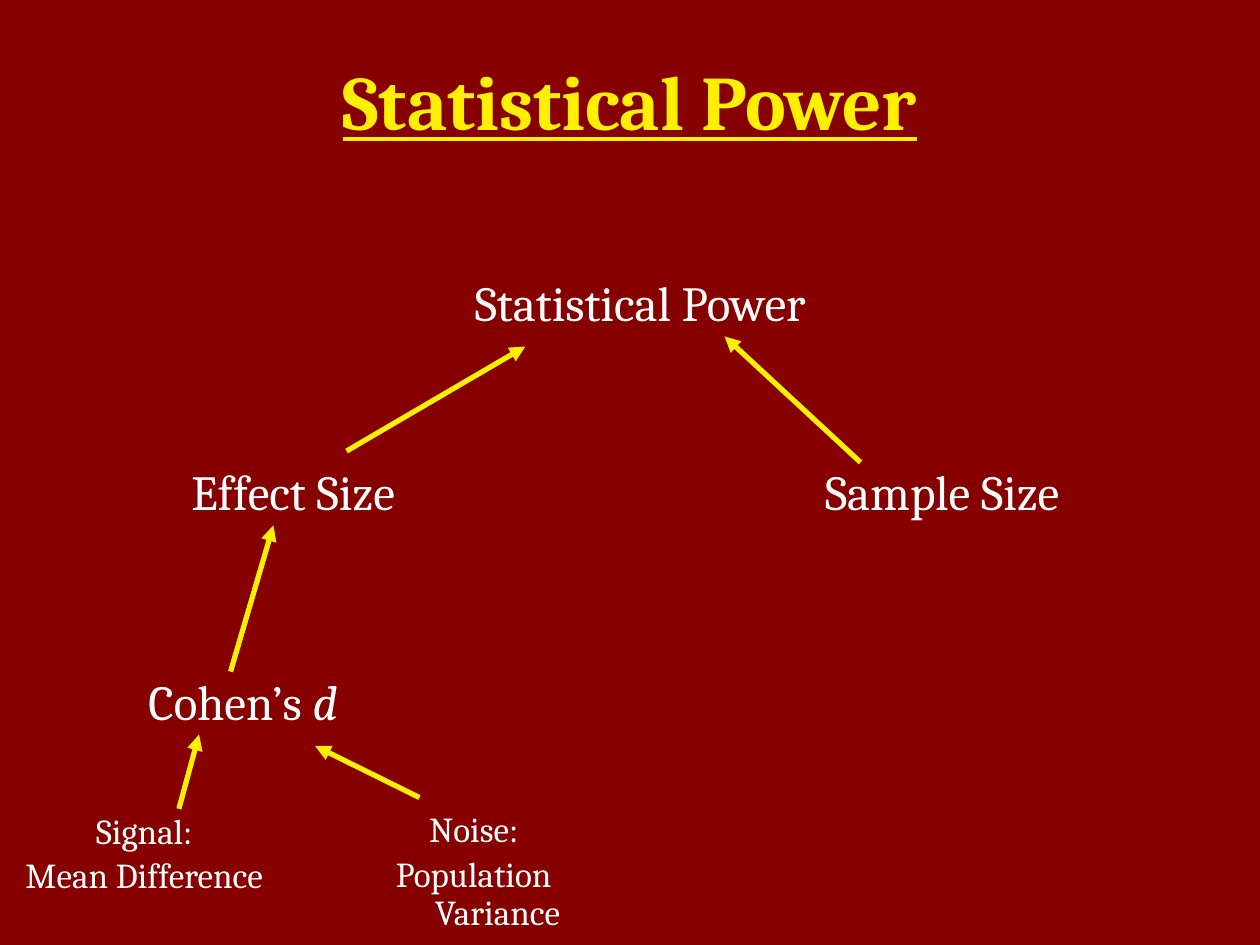
from pptx import Presentation
from pptx.dml.color import RGBColor
from pptx.enum.shapes import MSO_CONNECTOR
from pptx.enum.text import MSO_ANCHOR, MSO_AUTO_SIZE, PP_ALIGN
from pptx.oxml.ns import qn
from pptx.util import Inches, Pt
from lxml import etree

STRAIGHT = MSO_CONNECTOR.STRAIGHT
MIDDLE = MSO_ANCHOR.MIDDLE
GROW = MSO_AUTO_SIZE.SHAPE_TO_FIT_TEXT
LEFT, CENTER = PP_ALIGN.LEFT, PP_ALIGN.CENTER

THEME = {
    "font": "Cambria",
    "background": RGBColor(0x86, 0x00, 0x00),
    "accent": RGBColor(0xFF, 0xEF, 0x02),
    "text": RGBColor(0xFF, 0xFF, 0xFF),
    "title": 44,
    "concept": 28,
    "component": 20,
    "arrow": 3,
}

TITLE = "Statistical Power"

# Each line is a list of (text, italic) runs; box is left, top, width, height.
CONCEPTS = [
    ([[("Statistical Power", False)]], (3.67, 2.17, 2.92, 0.52)),
    ([[("Effect Size", False)]], (1.42, 3.67, 2.02, 0.52)),
    ([[("Sample Size", False)]], (6.45, 3.67, 2.23, 0.52)),
    ([[("Cohen’s ", False), ("d", True)]], (1.08, 5.33, 1.89, 0.52)),
]
COMPONENTS = [
    ([[("Signal:", False)], [("Mean Difference", False)]],
     (0.05, 6.41, 2.19, 0.77)),
    ([[("Noise:", False)], [("Population Variance", False)]],
     (2.56, 6.4, 2.4, 0.77)),
]

# Start and head of each arrow
ARROWS = [
    ((2.75, 3.58), (4.17, 2.75)),
    ((6.83, 3.67), (5.75, 2.67)),
    ((1.83, 5.33), (2.17, 4.17)),
    ((1.42, 6.42), (1.58, 5.83)),
    ((3.33, 6.33), (2.5, 5.92)),
]


def set_font(font, size, color):
    font.name = THEME["font"]
    font.size = Pt(size)
    font.color.rgb = color


def add_title(slide):
    sp = slide.shapes.title
    sp.left, sp.top, sp.width, sp.height = map(Inches, (0.75, 0.17, 8.5, 1.25))
    tf = sp.text_frame
    tf.text = TITLE
    tf.vertical_anchor = MIDDLE
    p = tf.paragraphs[0]
    p.alignment = CENTER
    set_font(p.font, THEME["title"], THEME["accent"])
    p.font.bold = p.font.underline = True


def add_label(slide, lines, box, size, align):
    tf = slide.shapes.add_textbox(*map(Inches, box)).text_frame
    tf.word_wrap = True
    tf.auto_size = GROW
    for i, runs in enumerate(lines):
        p = tf.add_paragraph() if i else tf.paragraphs[0]
        p.alignment = align
        p.line_spacing = 0.9
        p.space_before = Pt(size * 0.2)
        pPr = p._p.get_or_add_pPr()
        pPr.set("marL", str(Inches(0.38)))
        pPr.set("indent", str(-Inches(0.38)))
        set_font(p.font, size, THEME["text"])
        for text, italic in runs:
            r = p.add_run()
            r.text = text
            if italic:
                r.font.italic = True


def add_arrow(slide, start, head):
    line = slide.shapes.add_connector(STRAIGHT, *map(Inches, start + head))
    line.line.color.rgb = THEME["accent"]
    line.line.width = Pt(THEME["arrow"])
    etree.SubElement(line.line._get_or_add_ln(), qn("a:tailEnd"), type="triangle")
    etree.SubElement(line._element.spPr, qn("a:effectLst"))


def main():
    prs = Presentation()
    prs.slide_width, prs.slide_height = Inches(10), Inches(7.5)
    slide = prs.slides.add_slide(prs.slide_layouts[5])
    fill = slide.background.fill
    fill.solid()
    fill.fore_color.rgb = THEME["background"]

    add_title(slide)
    for lines, box in CONCEPTS:
        add_label(slide, lines, box, THEME["concept"], LEFT)
    for lines, box in COMPONENTS:
        add_label(slide, lines, box, THEME["component"], CENTER)
    for start, head in ARROWS:
        add_arrow(slide, start, head)
    prs.save("out.pptx")


if __name__ == "__main__":
    main()
